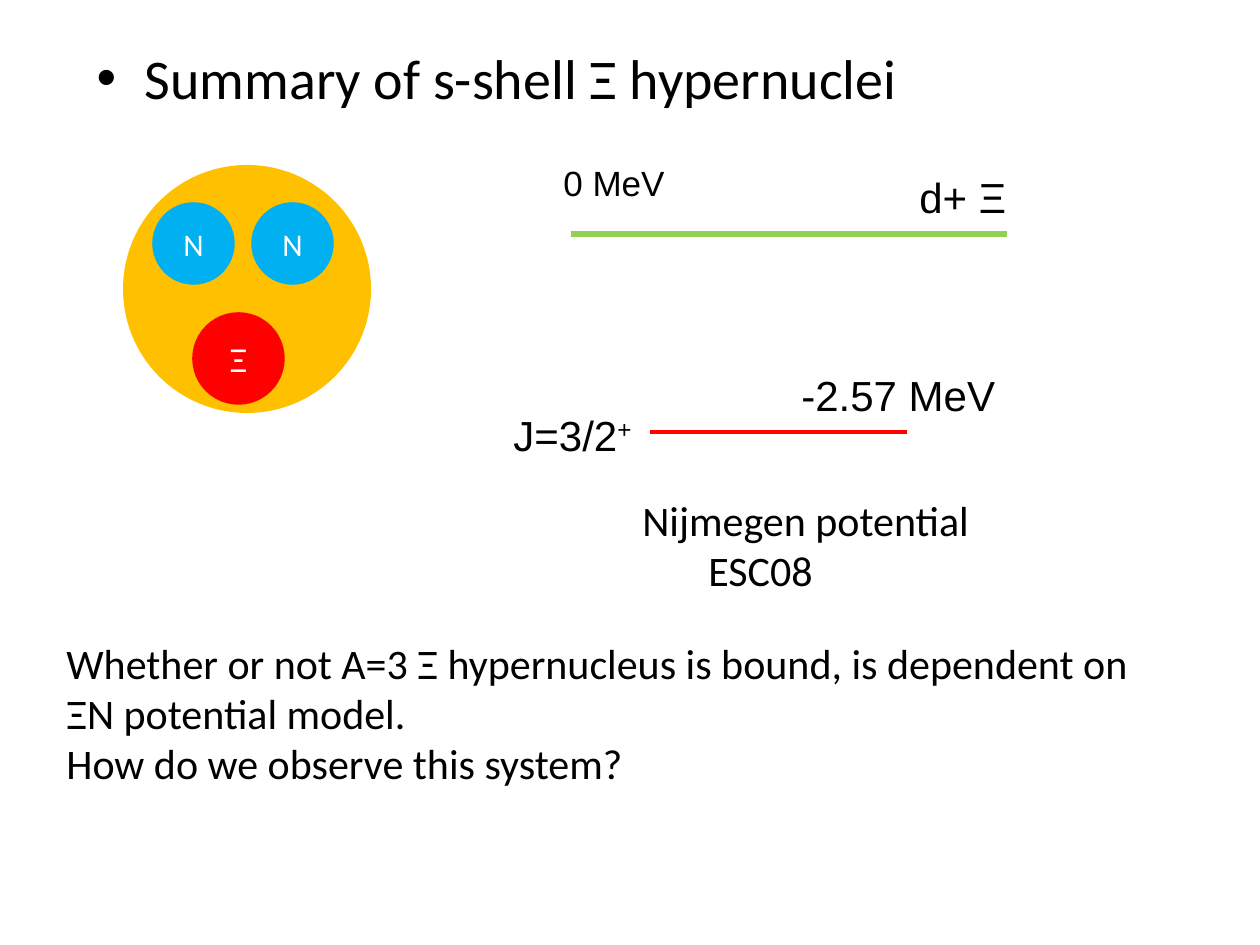
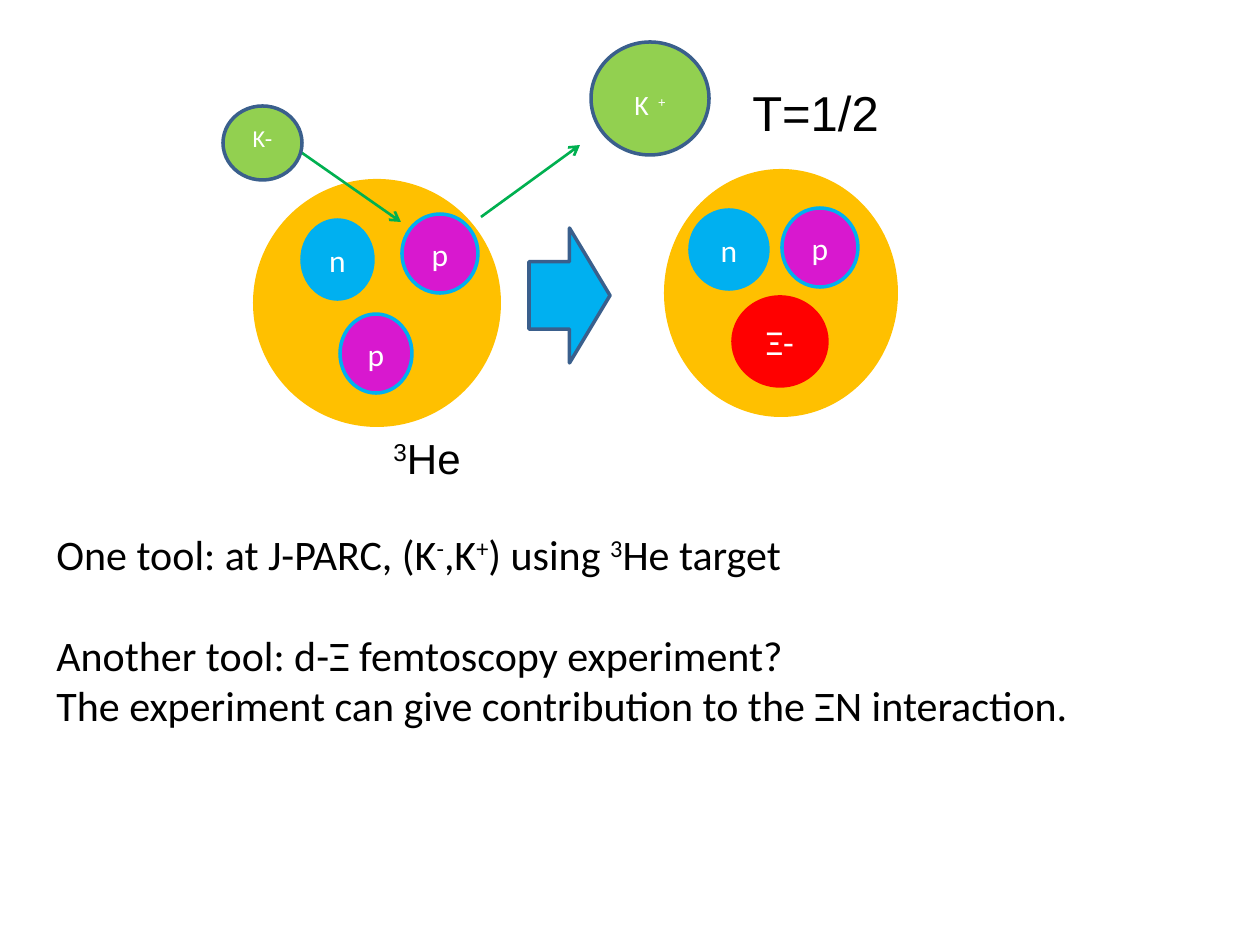
from lxml import etree
from pptx import Presentation
from pptx.dml.color import RGBColor
from pptx.enum.shapes import MSO_CONNECTOR, MSO_SHAPE
from pptx.enum.text import MSO_ANCHOR, MSO_AUTO_SIZE, PP_ALIGN
from pptx.oxml.ns import qn
from pptx.util import Pt

EMU_PER_PX = 914400 / 126
TITLE_ONLY, BLANK = 5, 6
OVAL, RIGHT_ARROW = MSO_SHAPE.OVAL, MSO_SHAPE.RIGHT_ARROW
STRAIGHT = MSO_CONNECTOR.STRAIGHT
LEFT, CENTER = PP_ALIGN.LEFT, PP_ALIGN.CENTER
TOP, MIDDLE = MSO_ANCHOR.TOP, MSO_ANCHOR.MIDDLE
FIT_SHAPE, NO_FIT = MSO_AUTO_SIZE.SHAPE_TO_FIT_TEXT, MSO_AUTO_SIZE.NONE

BLACK = RGBColor(0x00, 0x00, 0x00)
WHITE = RGBColor(0xFF, 0xFF, 0xFF)
GOLD = RGBColor(0xFF, 0xC0, 0x00)
BLUE = RGBColor(0x00, 0xB0, 0xF0)
RED = RGBColor(0xFF, 0x00, 0x00)
MAGENTA = RGBColor(0xD8, 0x18, 0xCF)
LIME = RGBColor(0x92, 0xD0, 0x50)
GREEN = RGBColor(0x00, 0xB0, 0x50)
NAVY = RGBColor(0x3A, 0x5F, 0x8C)
SANS, BODY = "Arial", "Calibri"
NUCLEON_H, XI_H, NUCLEUS_H = 79, 89, 248


def px(*lengths):
    return [round(n * EMU_PER_PX) for n in lengths]


def write(tf, lines, size, font, color):
    """Fill a text frame; text between bars is superscript."""
    for i, line in enumerate(lines):
        p = tf.paragraphs[0] if i == 0 else tf.add_paragraph()
        for k, piece in enumerate(line.split("|")):
            if not piece:
                continue
            r = p.add_run()
            r.text = piece
            r.font.size = Pt(size)
            r.font.name = font
            r.font.color.rgb = color
            if k % 2:
                r.font._element.set("baseline", "30000")


def add_title(s, text):
    """Bulleted title, aligned left at the top."""
    title = s.shapes.title
    title.left, title.top, title.width, title.height = px(84, 37, 1134, 624)
    tf = title.text_frame
    tf.auto_size = NO_FIT
    tf.vertical_anchor = TOP
    write(tf, [text], 32, BODY, BLACK)
    p = tf.paragraphs[0]
    p.alignment = LEFT
    p.space_before = Pt(6)
    indent = px(48)[0]
    pPr = p._p.get_or_add_pPr()
    pPr.set("marL", str(indent))
    pPr.set("indent", str(-indent))
    etree.SubElement(pPr, qn("a:buFont")).set("typeface", SANS)
    etree.SubElement(pPr, qn("a:buChar")).set("char", "•")


def add_label(s, x, y, w, h, lines, size=24, font=SANS):
    tf = s.shapes.add_textbox(*px(x, y, w, h)).text_frame
    tf.word_wrap = False
    tf.auto_size = FIT_SHAPE
    write(tf, lines, size, font, BLACK)
    return tf


def add_solid(s, preset, x, y, w, h, fill, line=None):
    sp = s.shapes.add_shape(preset, *px(x, y, w, h))
    sp.shadow.inherit = False
    sp.fill.solid()
    sp.fill.fore_color.rgb = fill
    if line is None:
        sp.line.fill.background()
    else:
        sp.line.color.rgb = line
        sp.line.width = Pt(2)
    return sp


def add_particle(s, x, y, w, h, text, fill, line, size=18):
    tf = add_solid(s, OVAL, x, y, w, h, fill, line).text_frame
    tf.vertical_anchor = MIDDLE
    write(tf, [text], size, BODY, WHITE)
    tf.paragraphs[0].alignment = CENTER
    return tf


def add_nucleus(s, x, y, w=NUCLEUS_H):
    add_solid(s, OVAL, x, y, w, NUCLEUS_H, GOLD)


def add_nucleon(s, x, y, w, name):
    fill = MAGENTA if name == "p" else BLUE
    add_particle(s, x, y, w, NUCLEON_H, name, fill, BLUE)


def add_xi(s, x, y, w, name):
    add_particle(s, x, y, w, XI_H, name, RED, RED, 20)


def add_line(s, x1, y1, x2, y2, color, width, arrow=False):
    c = s.shapes.add_connector(STRAIGHT, *px(x1, y1, x2, y2))
    c.line.color.rgb = color
    c.line.width = Pt(width)
    if arrow:
        etree.SubElement(c.line._get_or_add_ln(), qn("a:tailEnd")).set("type", "arrow")
    etree.SubElement(c._element.spPr, qn("a:effectLst"))


def summary_slide(prs):
    s = prs.slides.add_slide(prs.slide_layouts[TITLE_ONLY])
    add_title(s, "Summary of s-shell Ξ hypernuclei")

    # Hypernucleus
    add_nucleus(s, 123, 165)
    for x in (154, 253):
        add_nucleon(s, x, 204, 79, "N")
    add_xi(s, 194, 314, 89, "Ξ")

    # Energy levels
    add_line(s, 571, 234, 1007, 234, LIME, 3)
    add_line(s, 650, 432, 907, 432, RED, 2.25)
    add_label(s, 907, 165, 113, 64, ["d+ Ξ"])
    add_label(s, 501, 403, 146, 64, ["J=3/2|+|"])
    add_label(s, 789, 363, 222, 63, ["-2.57 MeV"])
    add_label(s, 551, 155, 127, 55, ["0 MeV"], 20)
    tf = add_label(s, 630, 488, 355, 115, ["Nijmegen potential", "ESC08"], font=BODY)
    tf.paragraphs[1]._p.get_or_add_pPr().set("marL", str(px(66)[0]))

    # Conclusion
    add_label(s, 54, 631, 1097, 165, [
        "Whether or not A=3 Ξ hypernucleus is bound, is dependent on",
        "ΞN potential model.",
        "How do we observe this system?",
    ], font=BODY)


def reaction_slide(prs):
    s = prs.slides.add_slide(prs.slide_layouts[BLANK])

    # Produced hypernucleus
    add_nucleus(s, 664, 169, 234)
    add_nucleon(s, 690, 210, 78, "n")
    add_nucleon(s, 782, 208, 76, "p")
    add_xi(s, 733, 297, 94, "Ξ-")
    add_label(s, 740, 76, 154, 72, ["T=1/2"], 28)

    # Helium target
    add_nucleus(s, 253, 179)
    add_nucleon(s, 302, 220, 71, "n")
    add_nucleon(s, 402, 214, 76, "p")
    add_nucleon(s, 340, 314, 72, "p")
    add_label(s, 381, 426, 96, 64, ["|3|He"])

    # Incoming and outgoing kaons
    add_line(s, 275, 134, 401, 222, GREEN, 1.5, arrow=True)
    add_particle(s, 223, 106, 79, 74, "|K-|", LIME, NAVY, 24)
    add_solid(s, RIGHT_ARROW, 529, 228, 81, 135, BLUE, NAVY)
    tf = add_particle(s, 591, 42, 118, 113, "K|| |+|", LIME, NAVY)
    for r, size in zip(tf.paragraphs[0].runs, (16, 24, 14)):
        r.font.size = Pt(size)
    add_line(s, 481, 217, 580, 145, GREEN, 1.5, arrow=True)

    # Experimental tools
    tf = add_label(s, 44, 522, 1046, 267, [
        "One tool: at J-PARC, (K|-|,K|+|) using |3|He target",
        "Another tool: d-Ξ femtoscopy experiment?",
        "The experiment can give contribution to the ΞN interaction.",
    ], font=BODY)
    tf.paragraphs[1].space_before = Pt(29)


def main():
    prs = Presentation()
    prs.slide_width, prs.slide_height = px(1260, 945)
    summary_slide(prs)
    reaction_slide(prs)
    prs.save("out.pptx")


if __name__ == "__main__":
    main()
